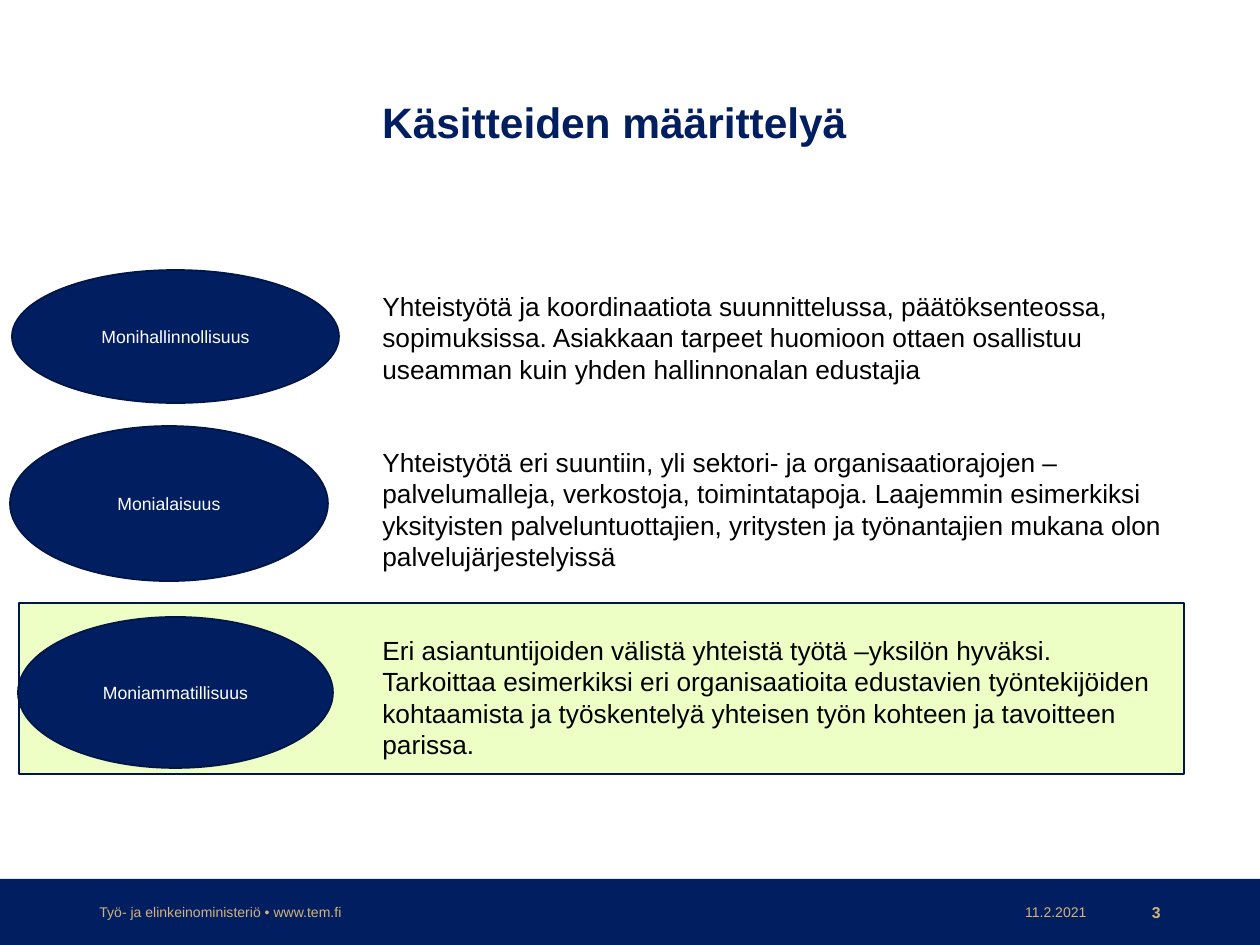
from pptx import Presentation
from pptx.dml.color import RGBColor
from pptx.enum.shapes import MSO_SHAPE
from pptx.enum.text import MSO_ANCHOR, MSO_AUTO_SIZE, PP_ALIGN
from pptx.util import Emu, Pt

PX = 914400 / 126
PAGE_WIDTH, PAGE_HEIGHT = 1260, 945
FONT = "Arial"
COLORS = {
    "navy": "001E60",
    "outline": "001647",
    "highlight": "EDFFC4",
    "gold": "D5B37A",
    "white": "FFFFFF",
    "black": "000000",
}

TITLE = "Käsitteiden määrittelyä"
TITLE_AREA = (242, 96, 745, 58)
FOOTER_BAND = (0, 879, PAGE_WIDTH, 66)
HIGHLIGHT_AREA = (19, 603, 1165, 171)
DEFINITION_LEFT = 370

CONCEPTS = [
    {
        "name": "Monihallinnollisuus",
        "ellipse": (12, 270, 327, 133),
        "definition": "Yhteistyötä ja koordinaatiota suunnittelussa, päätöksenteossa, "
        "sopimuksissa. Asiakkaan tarpeet huomioon ottaen osallistuu "
        "useamman kuin yhden hallinnonalan edustajia",
        "top": 284, "width": 847, "height": 108,
    },
    {
        "name": "Monialaisuus",
        "ellipse": (10, 426, 318, 155),
        "definition": "Yhteistyötä eri suuntiin, yli sektori- ja organisaatiorajojen – "
        "palvelumalleja, verkostoja, toimintatapoja. Laajemmin esimerkiksi "
        "yksityisten palveluntuottajien, yritysten ja työnantajien mukana olon "
        "palvelujärjestelyissä",
        "top": 440, "width": 847, "height": 140,
    },
    {
        "name": "Moniammatillisuus",
        "ellipse": (18, 617, 315, 151),
        "definition": "Eri asiantuntijoiden välistä yhteistä työtä –yksilön hyväksi. "
        "Tarkoittaa esimerkiksi eri organisaatioita edustavien työntekijöiden "
        "kohtaamista ja työskentelyä yhteisen työn kohteen ja tavoitteen parissa.",
        "top": 628, "width": 804, "height": 140,
    },
]

FOOTER_TOP, FOOTER_HEIGHT = 897, 30
FOOTERS = [
    ("Työ- ja elinkeinoministeriö • www.tem.fi", 87, 425, PP_ALIGN.LEFT, 8, False),
    ("11.2.2021", 1002, 97, PP_ALIGN.RIGHT, 8, False),
    ("3", 1099, 74, PP_ALIGN.RIGHT, 9, True),
]


def emu(*lengths):
    return [Emu(round(length * PX)) for length in lengths]


def color(name):
    return RGBColor.from_string(COLORS[name])


def write(shape, text, size, ink, align=PP_ALIGN.LEFT, anchor=MSO_ANCHOR.MIDDLE, bold=False):
    frame = shape.text_frame
    frame.text = text
    frame.word_wrap = True
    frame.vertical_anchor = anchor
    para = frame.paragraphs[0]
    para.alignment = align
    font = para.runs[0].font
    font.name, font.size, font.bold = FONT, Pt(size), bold
    font.color.rgb = color(ink)
    return frame


def add_filled(page, kind, area, fill, line=None):
    shape = page.shapes.add_shape(kind, *emu(*area))
    shape.shadow.inherit = False
    shape.fill.solid()
    shape.fill.fore_color.rgb = color(fill)
    if line:
        shape.line.color.rgb = color(line)
        shape.line.width = Pt(1)
    else:
        shape.line.fill.background()
    return shape


def add_title(page):
    title = page.shapes.title
    title.left, title.top, title.width, title.height = emu(*TITLE_AREA)
    frame = write(title, TITLE, 24.3, "navy", PP_ALIGN.CENTER, bold=True)
    frame.auto_size = MSO_AUTO_SIZE.NONE
    frame.paragraphs[0].line_spacing = 0.9


def add_concept(page, concept):
    ellipse = add_filled(page, MSO_SHAPE.OVAL, concept["ellipse"], "navy", "outline")
    write(ellipse, concept["name"], 10.1, "white", PP_ALIGN.CENTER)
    area = (DEFINITION_LEFT, concept["top"], concept["width"], concept["height"])
    box = page.shapes.add_textbox(*emu(*area))
    frame = write(box, concept["definition"], 15, "black", anchor=MSO_ANCHOR.TOP)
    frame.auto_size = MSO_AUTO_SIZE.SHAPE_TO_FIT_TEXT


def main():
    deck = Presentation()
    deck.slide_width, deck.slide_height = emu(PAGE_WIDTH, PAGE_HEIGHT)
    page = deck.slides.add_slide(deck.slide_layouts[5])

    add_filled(page, MSO_SHAPE.RECTANGLE, FOOTER_BAND, "navy")
    add_filled(page, MSO_SHAPE.RECTANGLE, HIGHLIGHT_AREA, "highlight", "outline")
    add_title(page)
    for concept in CONCEPTS:
        add_concept(page, concept)
    for text, left, width, align, size, bold in FOOTERS:
        box = page.shapes.add_textbox(*emu(left, FOOTER_TOP, width, FOOTER_HEIGHT))
        write(box, text, size, "gold", align, bold=bold)

    deck.save("out.pptx")


if __name__ == "__main__":
    main()
